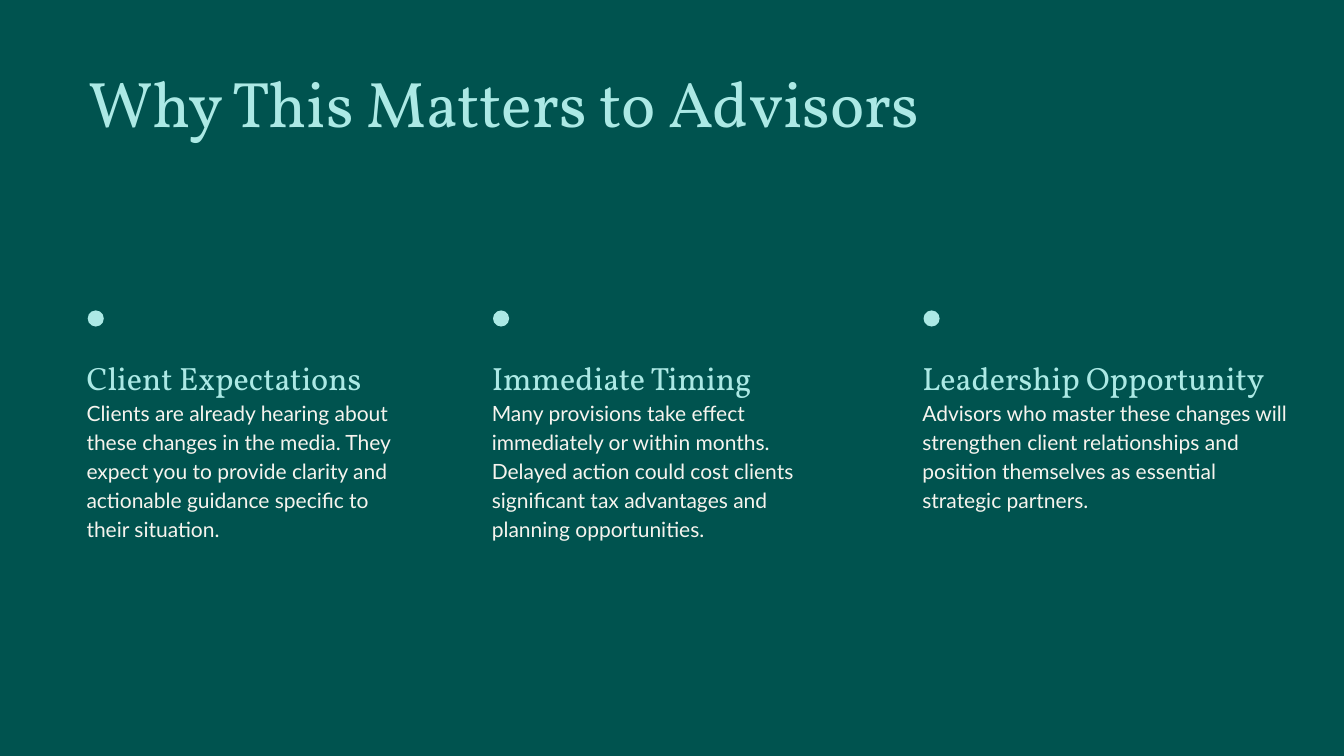
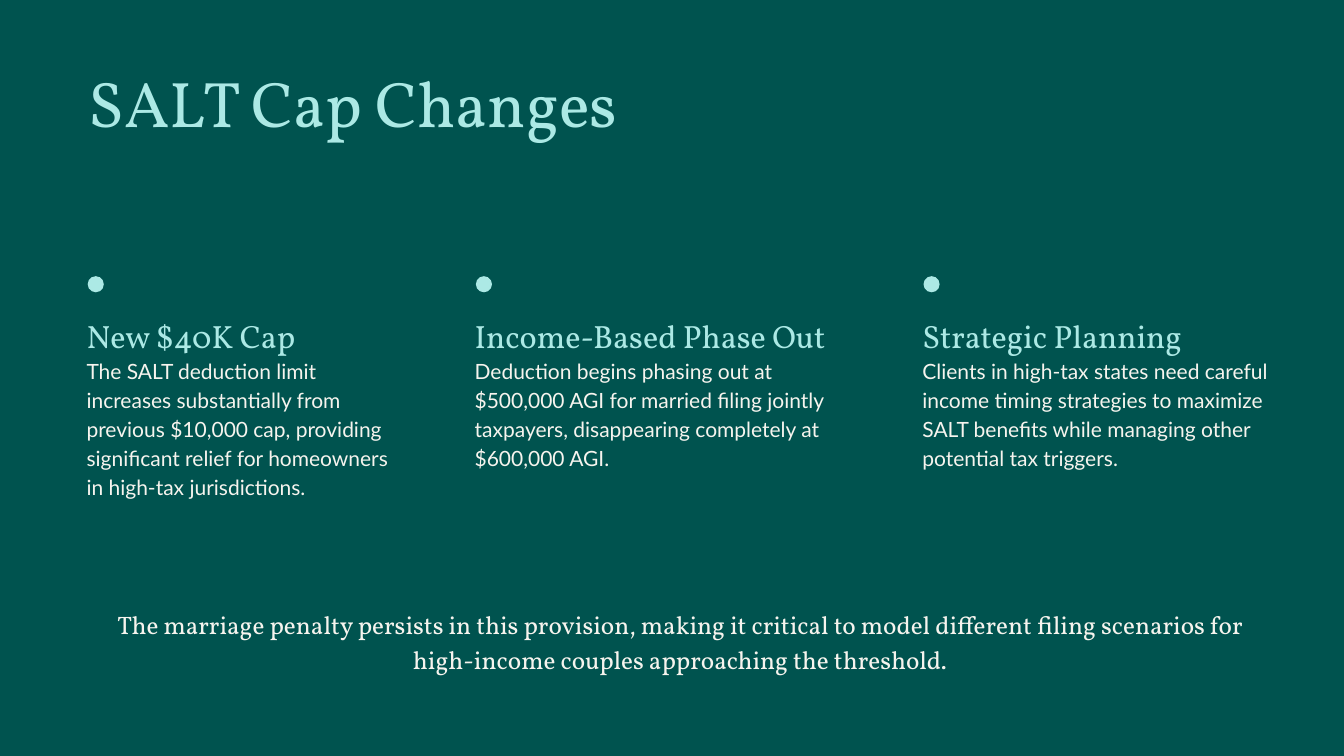
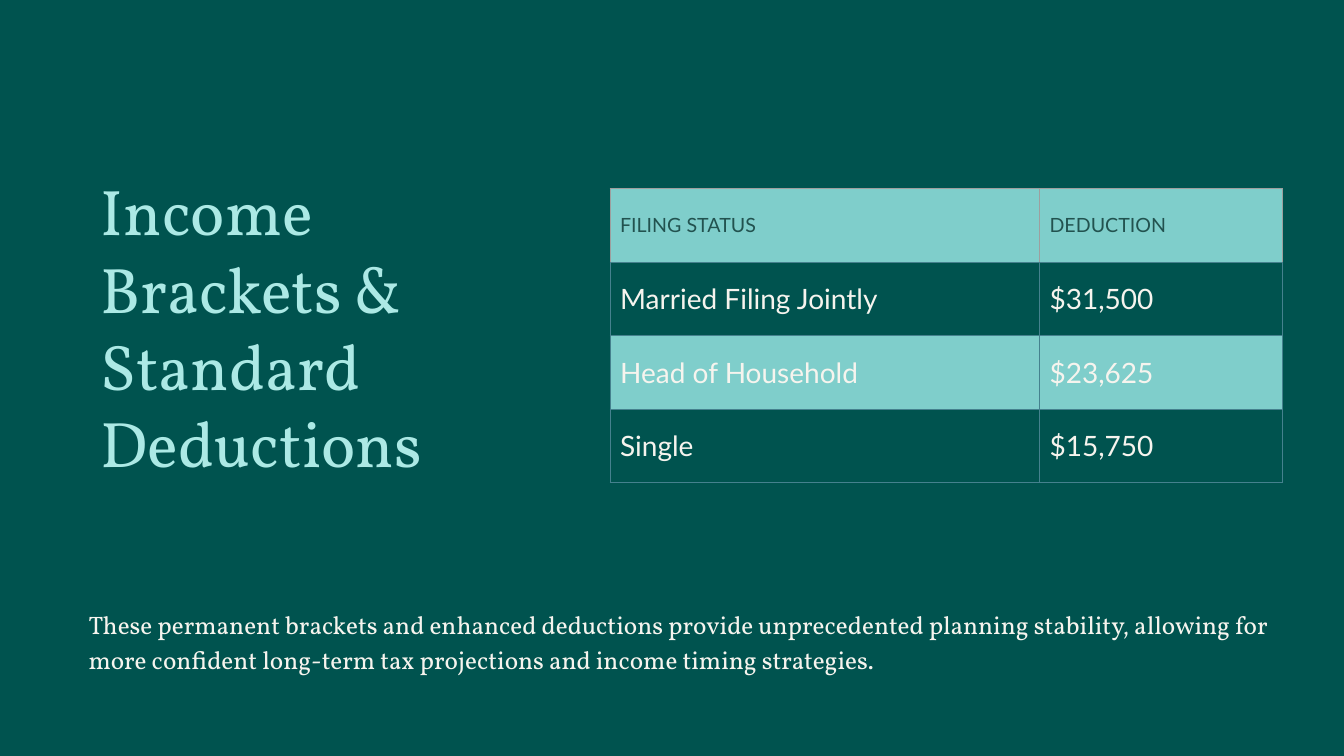
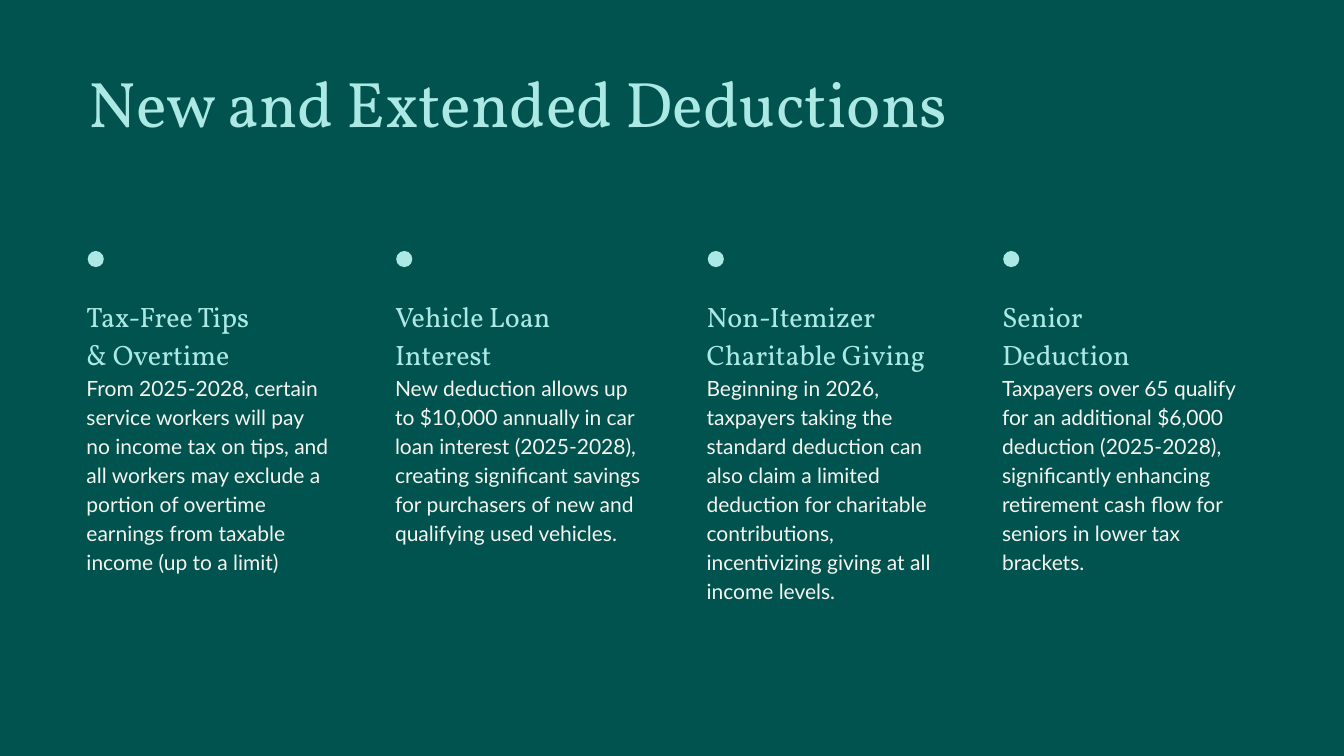
import pptx
import pptx.util
import pptx.dml.color
import pptx.enum.shapes
import pptx.enum.text
import pptx.oxml
import pptx.oxml.ns
from pptx.util import Inches

COLOURS = {
    "background": "00534F",
    "mint": "ACE9E5",
    "cream": "F6F4EE",
    "header": "7FCECB",
    "header_text": "22524F",
    "grid": "45818E",
    "header_grid": "9E9E9E",
}
FONTS = {"serif": "Vollkorn", "sans": "Lato"}
ALIGN = pptx.enum.text.PP_ALIGN
TITLE_BOX = (0.78, 0.58, 11.93, 0.96)
NOTE_BOX = (0.78, 5.95, 11.93, 0.89)
DOT_SIZE, DOT_INDENT = 0.16, 0.11

# Each column: left, width, heading lines, body
SLIDES = [
    {
        "title": "Why This Matters to Advisors",
        "dot_top": 3.08, "text_top": 3.45, "text_height": 1.95, "heading_size": 23,
        "columns": [
            (0.76, 3.32, ["Client Expectations"],
             "Clients are already hearing about these changes in the media. They expect you to "
             "provide clarity and actionable guidance specific to their situation."),
            (4.78, 3.73, ["Immediate Timing"],
             "Many provisions take effect immediately or within months. Delayed action could cost "
             "clients significant tax advantages and planning opportunities."),
            (9.05, 3.89, ["Leadership Opportunity"],
             "Advisors who master these changes will strengthen client relationships and position "
             "themselves as essential strategic partners."),
        ],
    },
    {
        "title": "SALT Cap Changes",
        "dot_top": 2.74, "text_top": 3.03, "text_height": 1.95, "heading_size": 23,
        "columns": [
            (0.76, 3.32, ["New $40K Cap"],
             "The SALT deduction limit increases substantially from previous $10,000 cap, providing "
             "significant relief for homeowners in high-tax jurisdictions."),
            (4.61, 4.04, ["Income-Based Phase Out"],
             "Deduction begins phasing out at $500,000 AGI for married filing jointly taxpayers, "
             "disappearing completely at $600,000 AGI."),
            (9.05, 3.89, ["Strategic Planning"],
             "Clients in high-tax states need careful income timing strategies to maximize SALT "
             "benefits while managing other potential tax triggers."),
        ],
        "note": "The marriage penalty persists in this provision, making it critical to model "
                "different filing scenarios for high-income couples approaching the threshold.",
        "note_align": ALIGN.CENTER,
    },
    {
        "title": "Income Brackets & Standard Deductions",
        "title_box": (0.9, 1.65, 4.13, 3.37),
        "table": [
            ("FILING STATUS", "DEDUCTION"),
            ("Married Filing Jointly", "$31,500"),
            ("Head of Household", "$23,625"),
            ("Single", "$15,750"),
        ],
        "note": "These permanent brackets and enhanced deductions provide unprecedented planning "
                "stability, allowing for more confident long-term tax projections and income "
                "timing strategies.",
    },
    {
        "title": "New and Extended Deductions",
        "dot_top": 2.49, "text_top": 2.87, "text_height": 3.69, "heading_size": 20,
        "columns": [
            (0.76, 2.64, ["Tax-Free Tips", "& Overtime"],
             "From 2025-2028, certain service workers will pay no income tax on tips, and all "
             "workers may exclude a portion of overtime earnings from taxable income (up to a limit)"),
            (3.82, 2.64, ["Vehicle Loan Interest"],
             "New deduction allows up to $10,000 annually in car loan interest (2025-2028), creating "
             "significant savings for purchasers of new and qualifying used vehicles."),
            (6.91, 2.64, ["Non-Itemizer Charitable Giving"],
             "Beginning in 2026, taxpayers taking the standard deduction can also claim a limited "
             "deduction for charitable contributions, incentivizing giving at all income levels."),
            (9.84, 2.64, ["Senior", "Deduction"],
             "Taxpayers over 65 qualify for an additional $6,000 deduction (2025-2028), significantly "
             "enhancing retirement cash flow for seniors in lower tax brackets."),
        ],
    },
]
TABLE_LEFT, TABLE_TOP, ROW_HEIGHT = 6.05, 1.87, 0.73
COLUMN_WIDTHS = [4.26, 2.41]
CELL_MARGIN = 0.1


def rgb(name):
    return pptx.dml.color.RGBColor.from_string(COLOURS[name])


def add_span(para, text, size, font, colour):
    span = para.add_run()
    span.text = text
    for key, value in {"name": FONTS[font], "size": pptx.util.Pt(size), "bold": False}.items():
        setattr(span.font, key, value)
    span.font.color.rgb = rgb(colour)


def add_text(page, area):
    """Add a wrapping text box and return its first paragraph."""
    frame = page.shapes.add_textbox(*map(Inches, area)).text_frame
    frame.word_wrap = True
    para = frame.paragraphs[0]
    para.line_spacing = 1.15
    return para


def set_title(page, text, area):
    title = page.shapes.title
    for key, value in zip(("left", "top", "width", "height"), area):
        setattr(title, key, Inches(value))
    frame_format = {
        "word_wrap": True,
        "auto_size": pptx.enum.text.MSO_AUTO_SIZE.NONE,
        "vertical_anchor": pptx.enum.text.MSO_ANCHOR.TOP,
    }
    for key, value in frame_format.items():
        setattr(title.text_frame, key, value)
    para = title.text_frame.paragraphs[0]
    para.alignment = ALIGN.LEFT
    add_span(para, text, 46, "serif", "mint")


def add_column(page, content, left, width, heading, body):
    dot = page.shapes.add_shape(
        pptx.enum.shapes.MSO_SHAPE.OVAL, Inches(left + DOT_INDENT),
        Inches(content["dot_top"]), Inches(DOT_SIZE), Inches(DOT_SIZE))
    dot.shadow.inherit = False
    dot.fill.solid()
    dot.fill.fore_color.rgb = rgb("mint")
    dot.line.fill.background()
    para = add_text(page, (left, content["text_top"], width, content["text_height"]))
    for line in heading:
        add_span(para, line, content["heading_size"], "serif", "mint")
        para.add_line_break()
    add_span(para, body, 15, "sans", "cream")


def set_borders(cell, is_header):
    for side in "LRTB":
        colour = COLOURS["header_grid" if is_header and side != "B" else "grid"]
        cell._tc.get_or_add_tcPr().append(pptx.oxml.parse_xml(
            f'<a:ln{side} {pptx.oxml.ns.nsdecls("a")} w="9525"><a:solidFill>'
            f'<a:srgbClr val="{colour}"/></a:solidFill></a:ln{side}>'))


def fill_cell(cell, row):
    """Fill the header fully, every second body row faintly, and the rest not at all."""
    if row % 2:
        cell.fill.background()
        return
    cell.fill.solid()
    cell.fill.fore_color.rgb = rgb("header")
    if row:
        colour = cell._tc.tcPr.find(".//" + pptx.oxml.ns.qn("a:srgbClr"))
        colour.append(pptx.oxml.parse_xml(
            f'<a:alpha {pptx.oxml.ns.nsdecls("a")} val="9000"/>'))


def add_deductions(page, rows):
    table = page.shapes.add_table(
        len(rows), len(COLUMN_WIDTHS), Inches(TABLE_LEFT), Inches(TABLE_TOP),
        Inches(sum(COLUMN_WIDTHS)), Inches(ROW_HEIGHT * len(rows))).table
    table.first_row = table.horz_banding = False
    for column, width in zip(table.columns, COLUMN_WIDTHS):
        column.width = Inches(width)
    for row, texts in enumerate(rows):
        size, colour = (20, "cream") if row else (14, "header_text")
        for index, text in enumerate(texts):
            cell = table.cell(row, index)
            cell.vertical_anchor = pptx.enum.text.MSO_ANCHOR.MIDDLE
            for side in ("left", "right", "top", "bottom"):
                setattr(cell, f"margin_{side}", Inches(CELL_MARGIN))
            add_span(cell.text_frame.paragraphs[0], text, size, "sans", colour)
            set_borders(cell, row == 0)
            fill_cell(cell, row)


def main():
    deck = pptx.Presentation()
    deck.slide_width, deck.slide_height = Inches(13.33), Inches(7.5)
    backdrop = deck.slide_master.background.fill
    backdrop.solid()
    backdrop.fore_color.rgb = rgb("background")
    for content in SLIDES:
        page = deck.slides.add_slide(deck.slide_layouts.get_by_name("Title Only"))
        set_title(page, content["title"], content.get("title_box", TITLE_BOX))
        for column in content.get("columns", []):
            add_column(page, content, *column)
        if "table" in content:
            add_deductions(page, content["table"])
        if "note" in content:
            para = add_text(page, NOTE_BOX)
            para.alignment = content.get("note_align", ALIGN.LEFT)
            add_span(para, content["note"], 18, "serif", "cream")
    deck.save("out.pptx")


if __name__ == "__main__":
    main()
